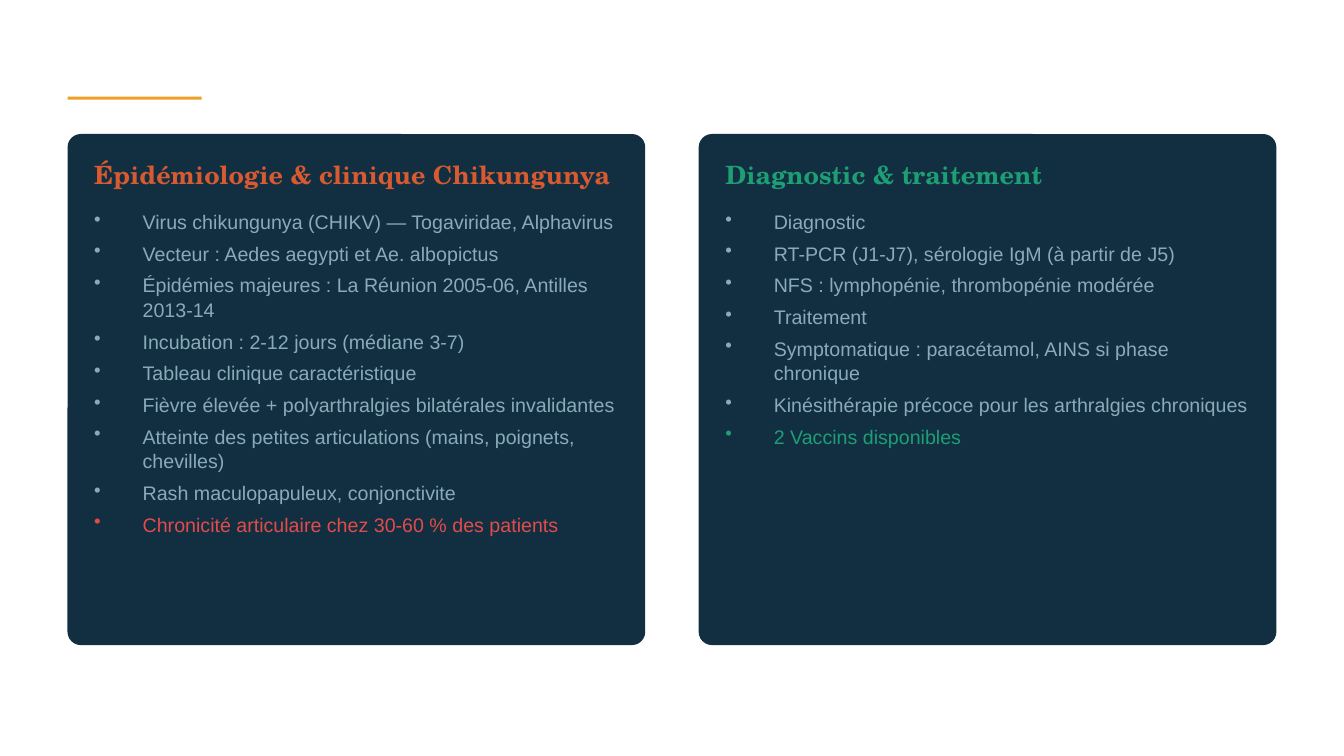
from lxml.etree import SubElement
from pptx import Presentation
from pptx.dml.color import RGBColor
from pptx.enum.shapes import MSO_SHAPE
from pptx.enum.text import MSO_ANCHOR, MSO_AUTO_SIZE
from pptx.oxml.ns import qn
from pptx.util import Inches, Pt

AMBER = RGBColor(0xEF, 0x9F, 0x27)
NAVY = RGBColor(0x12, 0x2F, 0x42)
ORANGE = RGBColor(0xD8, 0x5A, 0x30)
GREEN = RGBColor(0x1D, 0x9E, 0x75)
RED = RGBColor(0xE2, 0x4B, 0x4A)
MIST = RGBColor(0x8B, 0xAA, 0xB8)

CLINICAL = [
    "Virus chikungunya (CHIKV) — Togaviridae, Alphavirus",
    "Vecteur : Aedes aegypti et Ae. albopictus",
    "Épidémies majeures : La Réunion 2005-06, Antilles 2013-14",
    "Incubation : 2-12 jours (médiane 3-7)",
    "Tableau clinique caractéristique",
    "Fièvre élevée + polyarthralgies bilatérales invalidantes",
    "Atteinte des petites articulations (mains, poignets, chevilles)",
    "Rash maculopapuleux, conjonctivite",
    "Chronicité articulaire chez 30-60 % des patients",
]
CARE = [
    "Diagnostic",
    "RT-PCR (J1-J7), sérologie IgM (à partir de J5)",
    "NFS : lymphopénie, thrombopénie modérée",
    "Traitement",
    "Symptomatique : paracétamol, AINS si phase chronique",
    "Kinésithérapie précoce pour les arthralgies chroniques",
    "2 Vaccins disponibles",
]


def write(paragraph, text, *, font, size, color, bold=False, bullet=False, before=0):
    """Put formatted text into a paragraph."""
    if bullet:
        properties = paragraph._p.get_or_add_pPr()
        properties.set("marL", str(Inches(0.48)))
        properties.set("indent", str(Inches(-0.48)))
        SubElement(properties, qn("a:buChar"), char="•")
        paragraph.line_spacing = 1.05
    if before:
        paragraph.space_before = Pt(before)
    run = paragraph.add_run()
    run.text = text
    run.font.name = font
    run.font.size = Pt(size)
    run.font.bold = bold
    run.font.color.rgb = color


class CardSlide:
    """Draw accent, cards, headings and lists in one style."""

    heading_font = "TeX Gyre Schola"
    body_font = "Arial"

    def __init__(self, slide):
        self.slide = slide

    def block(self, kind, left, top, width, height, color):
        """Add a flat filled shape."""
        block = self.slide.shapes.add_shape(
            kind, Inches(left), Inches(top), Inches(width), Inches(height))
        block.shadow.inherit = False
        block.fill.solid()
        block.fill.fore_color.rgb = color
        block.line.fill.background()
        return block

    def frame(self, left, top, height, anchor):
        """Add a wrapping text box without margins."""
        frame = self.slide.shapes.add_textbox(
            Inches(left), Inches(top), Inches(5.2), Inches(height)).text_frame
        frame.word_wrap = True
        frame.auto_size = MSO_AUTO_SIZE.SHAPE_TO_FIT_TEXT
        frame.vertical_anchor = anchor
        frame.margin_left = frame.margin_right = 0
        frame.margin_top = frame.margin_bottom = 0
        return frame

    def heading(self, left, text, color):
        """Add a card heading."""
        frame = self.frame(left, 1.58, 0.3, MSO_ANCHOR.MIDDLE)
        write(frame.paragraphs[0], text, font=self.heading_font, size=18,
              color=color, bold=True)

    def bullets(self, left, height, points, key_color):
        """Add a list whose last point stands out."""
        frame = self.frame(left, 2.07, height, MSO_ANCHOR.TOP)
        last = len(points) - 1
        for index, point in enumerate(points):
            paragraph = frame.add_paragraph() if index else frame.paragraphs[0]
            write(paragraph, point, font=self.body_font, size=14, bullet=True,
                  color=key_color if index == last else MIST,
                  before=5 if index else 0)

    def card(self, left, title, title_color, points, key_color, list_height):
        """Add a rounded card with its heading and list."""
        panel = self.block(MSO_SHAPE.ROUNDED_RECTANGLE, left, 1.33, 5.73, 5.07, NAVY)
        panel.adjustments[0] = 0.026
        inner = left + 0.265
        self.heading(inner, title, title_color)
        self.bullets(inner, list_height, points, key_color)


def main():
    """Build and save the slide."""
    deck = Presentation()
    deck.slide_width, deck.slide_height = Inches(13.33), Inches(7.5)
    page = CardSlide(deck.slides.add_slide(deck.slide_layouts[6]))
    page.block(MSO_SHAPE.RECTANGLE, 0.67, 0.96, 1.33, 0.03, AMBER)
    page.card(0.67, "Épidémiologie & clinique Chikungunya", ORANGE, CLINICAL, RED, 2.68)
    page.card(6.93, "Diagnostic & traitement", GREEN, CARE, GREEN, 2.07)
    deck.save("out.pptx")


if __name__ == "__main__":
    main()
